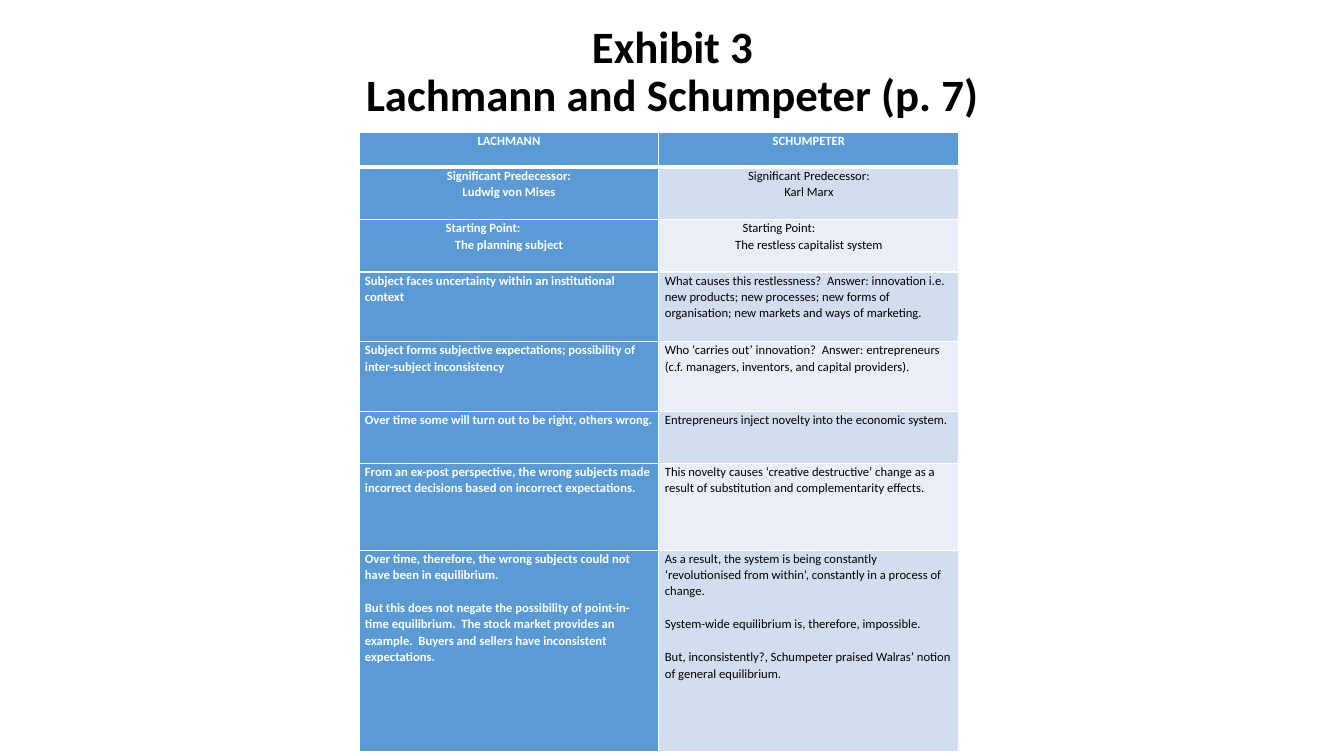
from lxml import etree
from pptx import Presentation
from pptx import util as u
from pptx.dml.color import RGBColor
from pptx.enum import text
from pptx.oxml import ns

HUES = {"ink": "000000", "paper": "FFFFFF", "blue": "5B9BD5", "mid": "D2DEEF", "pale": "EAEFF7"}
HEIGHTS = [0.35, 0.52, 0.52, 0.69, 0.69, 0.52, 0.86, 2]
ROWS = [
    (["LACHMANN"], ["SCHUMPETER"]),
    (["Significant Predecessor:", "Ludwig von Mises"], ["Significant Predecessor:", "Karl Marx"]),
    (["Starting Point:", "The planning subject"],
     ["Starting Point:", "The restless capitalist system"]),
    (["Subject faces uncertainty within an institutional context"],
     ["What causes this restlessness?  Answer: innovation i.e. new products; new processes; "
      "new forms of organisation; new markets and ways of marketing."]),
    (["Subject forms subjective expectations; possibility of inter-subject inconsistency"],
     ["Who ‘carries out’ innovation?  Answer: entrepreneurs "
      "(c.f. managers, inventors, and capital providers)."]),
    (["Over time some will turn out to be right, others wrong."],
     ["Entrepreneurs inject novelty into the economic system."]),
    (["From an ex-post perspective, the wrong subjects made incorrect decisions "
      "based on incorrect expectations."],
     ["This novelty causes ‘creative destructive’ change as a result of substitution "
      "and complementarity effects."]),
    (["Over time, therefore, the wrong subjects could not have been in equilibrium.",
      "But this does not negate the possibility of point-in-time equilibrium.  The stock market "
      "provides an example.  Buyers and sellers have inconsistent expectations."],
     ["As a result, the system is being constantly ‘revolutionised from within’, "
      "constantly in a process of change.",
      "System-wide equilibrium is, therefore, impossible.",
      "But, inconsistently?, Schumpeter praised Walras’ notion of general equilibrium."]),
]


class Deck:
    """Holds the style and the current slide."""

    def __init__(self):
        self.show = Presentation()
        self.show.slide_width, self.show.slide_height = u.Inches(13.33), u.Inches(7.5)
        self.slide = self.show.slides.add_slide(self.show.slide_layouts[5])

    def hue(self, name):
        return RGBColor.from_string(HUES[name])

    def run(self, para, words, size, color, bold):
        run = para.add_run()
        run.text = words
        font = run.font
        font.name, font.size, font.bold = "Calibri", u.Pt(size), bold
        font.color.rgb = self.hue(color)

    def title(self, lines, box):
        head = self.slide.shapes.title
        head.left, head.top, head.width, head.height = map(u.Inches, box)
        frame = head.text_frame
        frame.word_wrap, frame.auto_size = True, text.MSO_AUTO_SIZE.NONE
        frame.vertical_anchor = text.MSO_ANCHOR.MIDDLE
        para = frame.paragraphs[0]
        para.alignment, para.line_spacing = text.PP_ALIGN.CENTER, 0.9
        for i, line in enumerate(lines):
            if i:
                para.add_line_break()
            self.run(para, line, 32, "ink", True)

    def edges(self, cell, row):
        props = cell._tc.get_or_add_tcPr()
        for i, side in enumerate("LRTB"):
            thick = (row, side) in ((0, "B"), (1, "T"))
            line = etree.Element(ns.qn("a:ln" + side), w=str(u.Pt(3 if thick else 1)))
            fill = etree.SubElement(line, ns.qn("a:solidFill"))
            etree.SubElement(fill, ns.qn("a:srgbClr"), val=HUES["paper"])
            props.insert(i, line)

    def cell(self, cell, row, col, lines):
        lead = row == 0 or col == 0
        cell.fill.solid()
        cell.fill.fore_color.rgb = self.hue("blue" if lead else "mid" if row % 2 else "pale")
        cell.margin_left = cell.margin_right = u.Inches(0.06)
        cell.margin_top = cell.margin_bottom = 0
        self.edges(cell, row)
        for i, words in enumerate(lines):
            para = cell.text_frame.paragraphs[0] if i == 0 else cell.text_frame.add_paragraph()
            para.line_spacing = 1.07
            if row == 2 and i == 0:
                para._p.get_or_add_pPr().set("marL", str(u.Inches(0.8 - 0.03 * col)))
            elif row < 3:
                para.alignment = text.PP_ALIGN.CENTER
            elif i:
                para.space_before = u.Pt(11.75)
            self.run(para, words, 9, "paper" if lead else "ink", lead)

    def table(self, rows, heights, box):
        frame = self.slide.shapes.add_table(len(rows), len(rows[0]), *map(u.Inches, box))
        grid = frame.table
        grid.first_row = grid.horz_banding = False
        for col in grid.columns:
            col.width = u.Inches(box[2] / len(rows[0]))
        for r, pair in enumerate(rows):
            grid.rows[r].height = u.Inches(heights[r])
            for c, lines in enumerate(pair):
                self.cell(grid.cell(r, c), r, c, lines)


def main():
    deck = Deck()
    deck.title(["Exhibit 3", "Lachmann and Schumpeter (p. 7)"], (0.92, 0, 11.5, 1.45))
    deck.table(ROWS, HEIGHTS, (3.56, 1.31, 5.95, sum(HEIGHTS)))
    deck.show.save("out.pptx")


if __name__ == "__main__":
    main()
